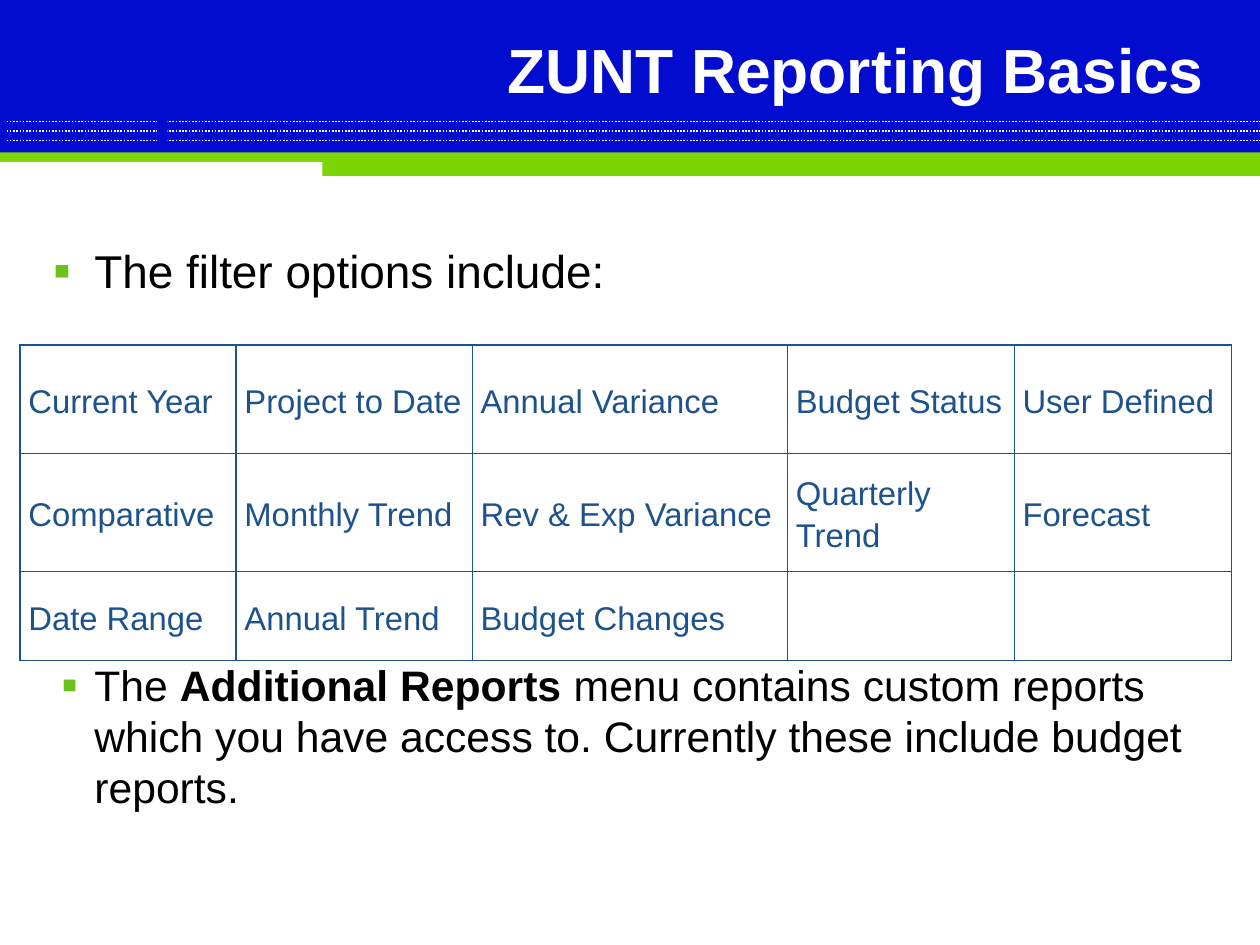
from dataclasses import dataclass

from lxml import etree
from pptx import Presentation
from pptx import util as u
from pptx.dml.color import RGBColor
from pptx.enum import dml, shapes, text
from pptx.oxml import ns
from pptx.slide import Slide

BLUE = RGBColor(0x02, 0x0C, 0xCE)
GREEN = RGBColor(0x7D, 0xD5, 0x03)
BULLET = RGBColor(0x6B, 0xC2, 0x1C)
NAVY = RGBColor(0x1D, 0x52, 0x8D)
WHITE = RGBColor(0xFF, 0xFF, 0xFF)
BLACK = RGBColor(0, 0, 0)

WIDTH, HEIGHT = 10.67, 8
COLUMN_WIDTHS = [1.83, 2, 2.67, 1.92, 1.84]
ROW_HEIGHTS = [0.92, 1, 0.75]
FILTERS = [
    ["Current Year", "Project to Date", "Annual Variance", "Budget Status", "User Defined"],
    ["Comparative", "Monthly Trend", "Rev & Exp Variance", "Quarterly Trend", "Forecast"],
    ["Date Range", "Annual Trend", "Budget Changes", "", ""],
]


def add_xml(parent, tag, **attributes):
    return etree.SubElement(parent, ns.qn(tag), attributes)


@dataclass
class Page:
    """Draws styled elements on one slide."""

    slide: Slide
    font: str = "Arial"

    def style(self, paragraph, size, color, bold=None):
        paragraph.font.name = self.font
        paragraph.font.size = u.Pt(size)
        paragraph.font.color.rgb = color
        paragraph.font.bold = bold

    def band(self, left, top, width, height, color):
        box = self.slide.shapes.add_shape(
            shapes.MSO_SHAPE.RECTANGLE, *map(u.Inches, (left, top, width, height)))
        box.shadow.inherit = False
        box.fill.solid()
        box.fill.fore_color.rgb = color
        box.line.fill.background()

    def dotted_line(self, top):
        line = self.slide.shapes.add_connector(
            shapes.MSO_CONNECTOR.STRAIGHT, 0, u.Inches(top), u.Inches(WIDTH), u.Inches(top))
        line.line.color.rgb = WHITE
        line.line.width = u.Pt(1)
        line.line.dash_style = dml.MSO_LINE.ROUND_DOT
        add_xml(line._element.spPr, "a:effectLst")

    def text_box(self, left, top, width, height):
        box = self.slide.shapes.add_textbox(*map(u.Inches, (left, top, width, height)))
        frame = box.text_frame
        frame.word_wrap = True
        frame.margin_left = frame.margin_right = u.Inches(0.11)
        frame.margin_top = frame.margin_bottom = u.Inches(0.05)
        return frame

    def title(self, words):
        frame = self.text_box(2.93, 0.27, 7.38, 0.62)
        frame.vertical_anchor = text.MSO_ANCHOR.MIDDLE
        para = frame.paragraphs[0]
        para.text = words
        para.alignment = text.PP_ALIGN.RIGHT
        self.style(para, 38, WHITE, True)

    def bullet(self, top, height, size, hanging, spans):
        para = self.text_box(0.34, top, 10.33, height).paragraphs[0]
        properties = para._p.get_or_add_pPr()
        properties.set("marL", str(u.Inches(0.35)))
        properties.set("indent", str(-u.Inches(hanging)))
        add_xml(add_xml(properties, "a:buClr"), "a:srgbClr", val=str(BULLET))
        add_xml(properties, "a:buSzPct", val="110000")
        add_xml(properties, "a:buFont", typeface=self.font)
        add_xml(properties, "a:buChar", char="▪")
        self.style(para, size, BLACK)
        for words, bold in spans:
            span = para.add_run()
            span.text = words
            span.font.bold = bold

    def cell(self, cell, words):
        cell.fill.background()
        cell.vertical_anchor = text.MSO_ANCHOR.MIDDLE
        cell.margin_left = cell.margin_right = u.Inches(0.07)
        cell.margin_top = cell.margin_bottom = 0
        para = cell.text_frame.paragraphs[0]
        para.text = words
        para.line_spacing = 1.15
        self.style(para, 20, NAVY)
        properties = cell._tc.get_or_add_tcPr()
        for index, side in enumerate(("a:lnL", "a:lnR", "a:lnT", "a:lnB")):
            border = etree.Element(ns.qn(side), w=str(u.Pt(1)))
            add_xml(add_xml(border, "a:solidFill"), "a:srgbClr", val=str(NAVY))
            properties.insert(index, border)

    def table(self, left, top, widths, heights, rows):
        table = self.slide.shapes.add_table(
            len(heights), len(widths), u.Inches(left), u.Inches(top),
            u.Inches(sum(widths)), u.Inches(sum(heights))).table
        table.first_row = table.horz_banding = False
        for column, width in zip(table.columns, widths):
            column.width = u.Inches(width)
        for row, height, entries in zip(table.rows, heights, rows):
            row.height = u.Inches(height)
            for cell, words in zip(row.cells, entries):
                self.cell(cell, words)


def main():
    deck = Presentation()
    deck.slide_width, deck.slide_height = u.Inches(WIDTH), u.Inches(HEIGHT)
    page = Page(deck.slides.add_slide(deck.slide_layouts[6]))

    page.band(0, 0, WIDTH, 1.33, BLUE)
    for index in range(3):
        page.dotted_line(1.03 + 0.08 * index)
    page.band(0, 1.29, WIDTH, 0.08, GREEN)
    page.band(2.73, 1.32, 7.94, 0.17, GREEN)
    for left in (0, 1.33, 1.37):
        page.band(left, 0, 0.05, 1.24, BLUE)

    page.title("ZUNT Reporting Basics")
    page.bullet(2, 0.55, 28, 0.35, [("The filter options include:", False)])
    page.table(0.17, 2.92, COLUMN_WIDTHS, ROW_HEIGHTS, FILTERS)
    page.bullet(5.53, 1.4, 26, 0.28, [
        ("The ", False),
        ("Additional Reports ", True),
        ("menu contains custom reports which you have access to. "
         "Currently these include budget reports.", False),
    ])
    deck.save("out.pptx")


if __name__ == "__main__":
    main()
